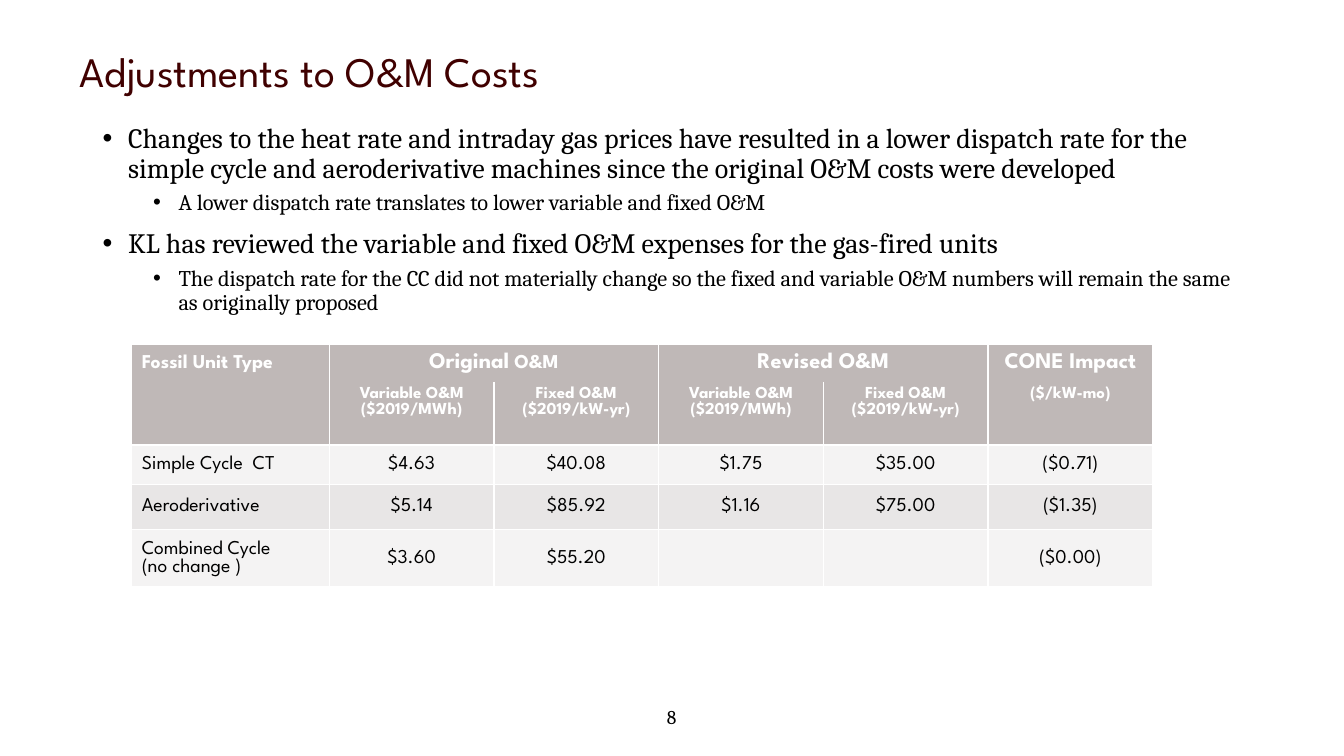
from lxml import etree
from pptx import Presentation
from pptx import util as u
from pptx.dml.color import RGBColor
from pptx.enum import text
from pptx.oxml.ns import qn

COLORS = {
    "title": "400000", "body": "000000", "white": "FFFFFF",
    "header": "BFB8B7", "light": "F4F3F3", "dark": "E8E6E6",
}
SERIF, SANS = "Cambria", "League Spartan"
LEFT, CENTER = text.PP_ALIGN.LEFT, text.PP_ALIGN.CENTER
TOP, MIDDLE = text.MSO_ANCHOR.TOP, text.MSO_ANCHOR.MIDDLE

BULLETS = [
    (0, "Changes to the heat rate and intraday gas prices have resulted in a lower "
        "dispatch rate for the simple cycle and aeroderivative machines since the "
        "original O&M costs were developed"),
    (1, "A lower dispatch rate translates to lower variable and fixed O&M"),
    (0, "KL has reviewed the variable and fixed O&M expenses for the gas-fired units"),
    (1, "The dispatch rate for the CC did not materially change so the fixed and "
        "variable O&M numbers will remain the same as originally proposed"),
]
COLUMN_WIDTHS = [4.98] + [4.15] * 5
ROW_HEIGHTS = [0.79, 1.59, 1.0, 1.14, 1.35]
GROUPS = {
    0: [("Fossil Unit Type", 14)],
    1: [("Original", 16), (" O&M", 14)],
    3: [("Revised O&M", 16)],
    5: [("CONE Impact", 16)],
}
UNITS = ["", *["Variable O&M ($2019/MWh)", "Fixed O&M ($2019/kW-yr)"] * 2, "($/kW-mo)"]
COSTS = [
    ["Simple Cycle  CT", "$4.63", "$40.08", "$1.75", "$35.00", "($0.71)"],
    ["Aeroderivative", "$5.14", "$85.92", "$1.16", "$75.00", "($1.35)"],
    ["Combined Cycle\n(no change )", "$3.60", "$55.20", "", "", "($0.00)"],
]


def write(paragraph, content, size=14, font=SANS, color="body", bold=False,
          align=LEFT, line_spacing=None, space_before=0):
    """Fill a paragraph with a string or with (string, size) runs."""
    paragraph.alignment = align
    paragraph.space_before = u.Pt(space_before)
    if line_spacing:
        paragraph.line_spacing = line_spacing
    paragraph.font.size = u.Pt(size)
    runs = [(content, size)] if isinstance(content, str) else content
    for words, run_size in runs:
        if not words:
            continue
        run = paragraph.add_run()
        run.text = words
        run.font.name = font
        run.font.size = u.Pt(run_size)
        run.font.bold = bold
        run.font.color.rgb = RGBColor.from_string(COLORS[color])


def add_text_frame(slide, left, top, width, height, anchor=TOP):
    box = slide.shapes.add_textbox(u.Cm(left), u.Cm(top), u.Cm(width), u.Cm(height))
    frame = box.text_frame
    frame.word_wrap = True
    frame.vertical_anchor = anchor
    return frame


def set_bullet(paragraph, level):
    properties = paragraph._p.get_or_add_pPr()
    properties.set("marL", str(u.Cm(0.64 + 1.27 * level)))
    properties.set("indent", str(u.Cm(-0.64)))
    etree.SubElement(properties, qn("a:buFont"), typeface="Arial")
    etree.SubElement(properties, qn("a:buChar"), char="•")


def add_bullets(slide):
    frame = add_text_frame(slide, 2.34, 3.0, 29.21, 13.72)
    for index, (level, words) in enumerate(BULLETS):
        paragraph = frame.add_paragraph() if index else frame.paragraphs[0]
        paragraph.level = level
        set_bullet(paragraph, level)
        space = (5 if level else 10) if index else 0
        write(paragraph, words, size=16 if level else 20, font=SERIF,
              line_spacing=0.9, space_before=space)


def set_borders(cell, sides):
    """Draw white 1 pt lines on the given sides and none on the others."""
    properties = cell._tc.get_or_add_tcPr()
    for position, side in enumerate("LRTB"):
        line = etree.Element(qn(f"a:ln{side}"), w=str(u.Pt(1)))
        if side in sides:
            fill = etree.SubElement(line, qn("a:solidFill"))
            etree.SubElement(fill, qn("a:srgbClr"), val=COLORS["white"])
        else:
            etree.SubElement(line, qn("a:noFill"))
        properties.insert(position, line)


def fill_cell(cell, content, fill, borders="LRTB", anchor=MIDDLE, **style):
    cell.fill.solid()
    cell.fill.fore_color.rgb = RGBColor.from_string(COLORS[fill])
    set_borders(cell, borders)
    cell.vertical_anchor = anchor
    lines = content.split("\n") if isinstance(content, str) else [content]
    frame = cell.text_frame
    for index, line in enumerate(lines):
        paragraph = frame.add_paragraph() if index else frame.paragraphs[0]
        write(paragraph, line, **style)


def add_cost_table(slide):
    graphic = slide.shapes.add_table(
        len(ROW_HEIGHTS), len(COLUMN_WIDTHS), u.Cm(3.32), u.Cm(8.69),
        u.Cm(sum(COLUMN_WIDTHS)), u.Cm(sum(ROW_HEIGHTS)))
    table = graphic.table
    for column, width in zip(table.columns, COLUMN_WIDTHS):
        column.width = u.Cm(width)
    for row, height in zip(table.rows, ROW_HEIGHTS):
        row.height = u.Cm(height)
    for start in (1, 3):
        table.cell(0, start).merge(table.cell(0, start + 1))

    for column in range(len(COLUMN_WIDTHS)):
        align = CENTER if column else LEFT
        header = {"fill": "header", "color": "white", "bold": True, "align": align}
        fill_cell(table.cell(0, column), GROUPS.get(column, ""), borders="LRT", **header)
        fill_cell(table.cell(1, column), UNITS[column], borders="LRB", anchor=TOP,
                  size=12, **header)
        for index, costs in enumerate(COSTS):
            fill_cell(table.cell(index + 2, column), costs[column],
                      fill="dark" if index % 2 else "light", align=align)


def main():
    presentation = Presentation()
    presentation.slide_width, presentation.slide_height = u.Cm(33.87), u.Cm(19.05)
    slide = presentation.slides.add_slide(presentation.slide_layouts[6])

    title = add_text_frame(slide, 1.75, 0.48, 29.21, 2.77, anchor=MIDDLE)
    write(title.paragraphs[0], "Adjustments to O&M Costs", size=30, color="title",
          line_spacing=0.9)
    add_bullets(slide)
    add_cost_table(slide)
    number = add_text_frame(slide, 13.56, 17.7, 6.73, 1.09)
    write(number.paragraphs[0], "8", font=SERIF, align=CENTER, line_spacing=0.9)

    presentation.save("out.pptx")


if __name__ == "__main__":
    main()
